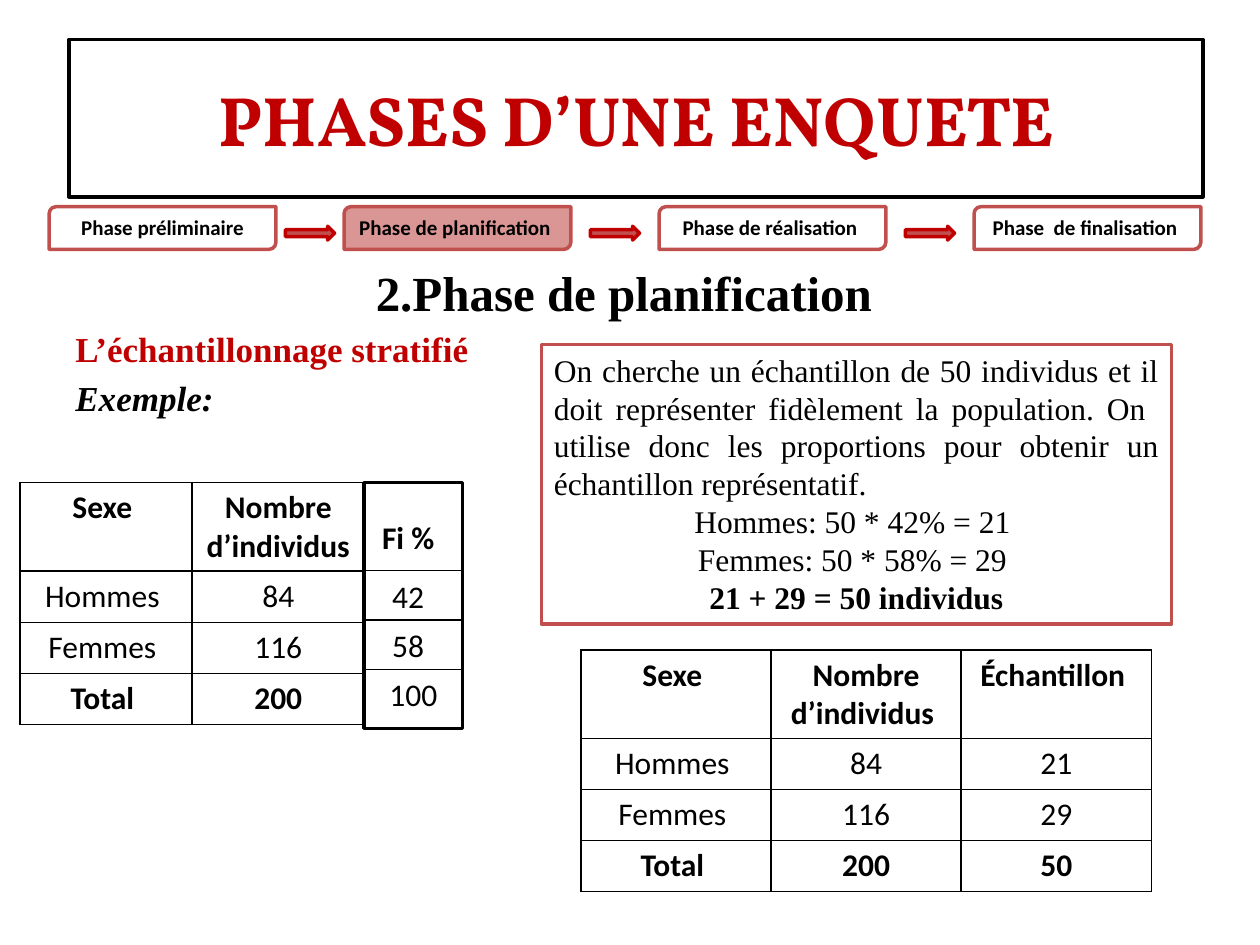
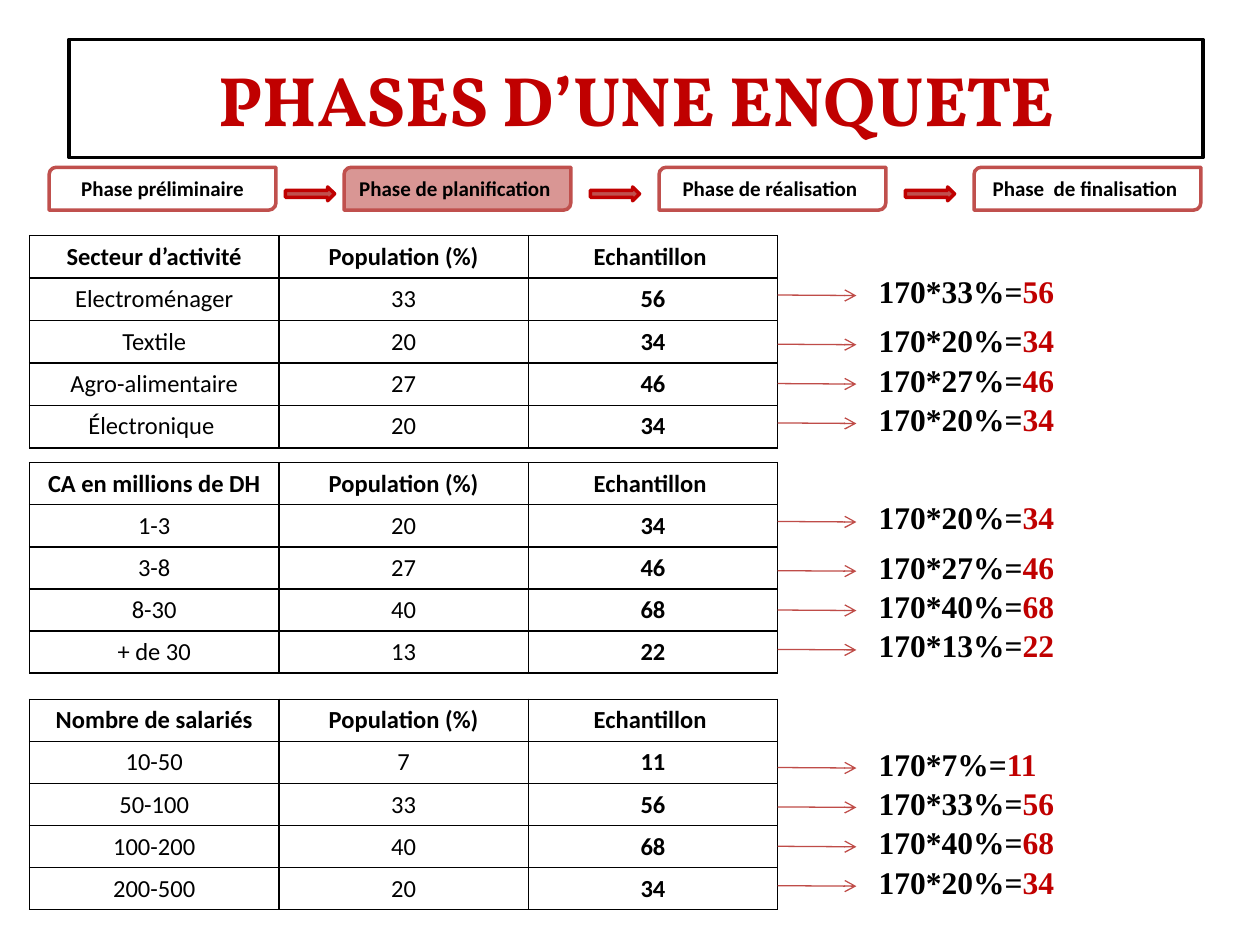
import pptx
import pptx.dml.color
import pptx.enum.shapes
import pptx.enum.text
import pptx.oxml
import pptx.oxml.ns
import pptx.util

Pt = pptx.util.Pt
SHAPES = pptx.enum.shapes.MSO_SHAPE
ANCHOR = pptx.enum.text.MSO_ANCHOR
ALIGN = pptx.enum.text.PP_ALIGN

BLACK, WHITE, RED, BRICK, ROSE = "000000", "FFFFFF", "C00000", "C0504D", "D99694"
THIN_RED = "BF4C48"
SANS, SERIF, DISPLAY = "Calibri", "Times New Roman", "Vollkorn"

TITLE = "PHASES D’UNE ENQUETE"
PHASES = [  # text, left, fill
    ("Phase préliminaire", 28.1, None),
    ("Phase de planification ", 196.6, ROSE),
    ("Phase de réalisation ", 376.6, WHITE),
    ("Phase  de finalisation ", 556.6, WHITE),
]
PHASE_WIDTH, PHASE_HEIGHT = 129.6, 24.5
ARROW_WIDTH, ARROW_HEIGHT = 28.1, 7.9

HEADINGS = [  # text, format, alignment
    ("2.Phase de planification ", {"size": 28, "bold": True}, ALIGN.CENTER),
    ("L’échantillonnage stratifié", {"size": 20, "bold": True, "color": RED}, ALIGN.LEFT),
    ("Exemple:", {"size": 20, "bold": True, "italic": True}, ALIGN.LEFT),
]
POPULATION = [
    ("Sexe ", "Nombre d’individus "),
    ("Hommes ", "84"),
    ("Femmes ", "116"),
    ("Total ", "200"),
]
SAMPLE_COLUMN = ["Échantillon ", "21", "29", "50"]
FREQUENCIES = ["42", "58", "100"]
EXPLANATION = [  # text, bold, alignment
    ("On cherche un échantillon de 50 individus et il doit représenter fidèlement "
     "la population. On  utilise donc les proportions pour obtenir un échantillon "
     "représentatif. ", False, ALIGN.JUSTIFY),
    ("Hommes: 50 * 42% = 21 ", False, ALIGN.CENTER),
    ("Femmes: 50 * 58% = 29 ", False, ALIGN.CENTER),
    ("21 + 29 = 50 individus", True, ALIGN.CENTER),
]

SAMPLE_SIZE = 170
QUOTAS = [
    {"criterion": "Secteur d’activité", "top": 134.6, "first_formula": 151.9, "extra_gap": 5.6,
     "rows": [("Electroménager", "33", "56"), ("Textile", "20", "34"),
              ("Agro-alimentaire", "27", "46"), ("Électronique ", "20", "34")]},
    {"criterion": "CA en millions de DH", "top": 264.4, "first_formula": 281.3, "extra_gap": 5.6,
     "rows": [("1-3", "20", "34"), ("3-8", "27", "46"),
              ("8-30", "40", "68"), ("+ de 30", "13", "22")]},
    {"criterion": "Nombre de salariés", "top": 399.6, "first_formula": 421.9, "extra_gap": 0,
     "rows": [("10-50", "7", "11"), ("50-100", "33", "56"),
              ("100-200", "40", "68"), ("200-500", "20", "34")]},
]
FORMULA_STEP = 22.5


def rgb(value):
    return pptx.dml.color.RGBColor.from_string(value)


def points(*lengths):
    return [Pt(length) for length in lengths]


def write(paragraph, text, color=BLACK, size=18, align=ALIGN.CENTER, **font):
    """Add one formatted run to the paragraph."""
    paragraph.alignment = align
    run = paragraph.add_run()
    run.text = text
    run.font.color.rgb = rgb(color)
    for name, value in {"name": SANS, "size": Pt(size), "bold": False, **font}.items():
        setattr(run.font, name, value)


def next_paragraph(frame, index):
    return frame.add_paragraph() if index else frame.paragraphs[0]


def add_box(slide, kind, box, fill, line, anchor=ANCHOR.TOP):
    shape = slide.shapes.add_shape(kind, *points(*box))
    shape.shadow.inherit = False
    if fill:
        shape.fill.solid()
        shape.fill.fore_color.rgb = rgb(fill)
    else:
        shape.fill.background()
    shape.line.color.rgb = rgb(line)
    shape.line.width = Pt(2)
    shape.text_frame.word_wrap = True
    shape.text_frame.vertical_anchor = anchor
    return shape


def add_text(slide, box):
    frame = slide.shapes.add_textbox(*points(*box)).text_frame
    frame.word_wrap = True
    return frame


def add_line(slide, start, end, color, arrow=False):
    connector = slide.shapes.add_connector(
        pptx.enum.shapes.MSO_CONNECTOR.STRAIGHT, *points(*start, *end))
    connector.line.color.rgb = rgb(color)
    connector.line.width = Pt(0.75)
    if arrow:
        line = connector.line._get_or_add_ln()
        line.append(pptx.oxml.parse_xml(
            f'<a:tailEnd {pptx.oxml.ns.nsdecls("a")} type="arrow"/>'))
    connector._element.spPr.append(pptx.oxml.parse_xml(
        f'<a:effectLst {pptx.oxml.ns.nsdecls("a")}/>'))


def add_borders(cell):
    properties = cell._tc.get_or_add_tcPr()
    for side in "LRTB":
        properties.append(pptx.oxml.parse_xml(
            f'<a:ln{side} {pptx.oxml.ns.nsdecls("a")} w="{Pt(1)}"><a:solidFill>'
            f'<a:srgbClr val="{BLACK}"/></a:solidFill></a:ln{side}>'))


def add_grid(slide, left, top, column_width, row_heights, rows, size, is_bold):
    """Add a black-ruled table; is_bold(row, column) picks the bold cells."""
    width = column_width * len(rows[0])
    table = slide.shapes.add_table(
        len(rows), len(rows[0]), *points(left, top, width, sum(row_heights))).table
    table.first_row = table.horz_banding = False
    for column in table.columns:
        column.width = Pt(column_width)
    for row_index, values in enumerate(rows):
        table.rows[row_index].height = Pt(row_heights[row_index])
        for column_index, value in enumerate(values):
            cell = table.cell(row_index, column_index)
            add_borders(cell)
            cell.fill.background()
            write(cell.text_frame.paragraphs[0], value, size=size,
                  bold=is_bold(row_index, column_index))


def add_header(slide, title_height):
    """Add the title band and, below it, the row of phases."""
    title_top = 22.5
    title = add_box(slide, SHAPES.RECTANGLE, (39.4, title_top, 648, title_height),
                    WHITE, BLACK, ANCHOR.MIDDLE)
    write(title.text_frame.paragraphs[0], TITLE, RED, 40, name=DISPLAY, bold=True)
    top = title_top + title_height + 5.6
    for text, left, fill in PHASES:
        phase = add_box(slide, SHAPES.ROUND_2_DIAG_RECTANGLE,
                        (left, top, PHASE_WIDTH, PHASE_HEIGHT), fill, BRICK)
        write(phase.text_frame.paragraphs[0], text, size=12, bold=True)
    for (_, left, _), (_, following, _) in zip(PHASES, PHASES[1:]):
        arrow_left = (left + PHASE_WIDTH + following - ARROW_WIDTH) / 2
        add_box(slide, SHAPES.RIGHT_ARROW,
                (arrow_left, top + 11.2, ARROW_WIDTH, ARROW_HEIGHT), BRICK, RED)


def add_frequency_column(slide):
    left, width, first_line, step = 208.1, 56.2, 326.2, 28.1
    add_box(slide, SHAPES.RECTANGLE, (left, 275.8, width, 140.4), None, BLACK)
    heading = add_text(slide, (left, 292.3, 50.4, 29))
    write(heading.paragraphs[0], "Fi %", bold=True)
    for index, value in enumerate(FREQUENCIES):
        top = first_line + index * step
        add_line(slide, (left, top), (left + width, top), BLACK)
        label_width = width if value == FREQUENCIES[-1] else 50.4
        write(add_text(slide, (left, top, label_width, 29)).paragraphs[0], value)


def build_stratified_slide(slide):
    headings = add_text(slide, (36, 146.2, 648, 95.8))
    for index, (text, font, align) in enumerate(HEADINGS):
        paragraph = next_paragraph(headings, index)
        paragraph.space_before = Pt(font["size"] * 0.2)
        write(paragraph, text, align=align, name=SERIF, **font)
    add_header(slide, 90)

    row_heights = [50.6] + [29.2] * 3
    sample = [(*row, value) for row, value in zip(POPULATION, SAMPLE_COLUMN)]
    for left, top, column_width, rows in [(11.3, 275.8, 98.5, POPULATION),
                                          (331.9, 371.3, 108.7, sample)]:
        add_grid(slide, left, top, column_width, row_heights, rows, 18,
                 lambda row, column: row in (0, 3))
    add_frequency_column(slide)

    explanation = add_box(slide, SHAPES.RECTANGLE, (309.4, 196.9, 360, 159.8), WHITE, BRICK)
    for index, (text, bold, align) in enumerate(EXPLANATION):
        write(next_paragraph(explanation.text_frame, index), text,
              align=align, name=SERIF, bold=bold)


def build_quota_slide(slide):
    add_header(slide, 67.5)
    left, column_width = 16.9, 142.5
    table_right = left + 3 * column_width
    for quota in QUOTAS:
        rows = [(quota["criterion"], "Population (%)", "Echantillon "), *quota["rows"]]
        add_grid(slide, left, quota["top"], column_width, [24.05] * len(rows), rows, 14,
                 lambda row, column: row == 0 or column == 2)
        for index, (_, share, count) in enumerate(quota["rows"]):
            top = quota["first_formula"] + index * FORMULA_STEP
            if index:
                top += quota["extra_gap"]
            add_line(slide, (table_right, top + 16.7), (table_right + 45, top + 17),
                     THIN_RED, arrow=True)
            paragraph = add_text(slide, (495, top, 123.8, 29)).paragraphs[0]
            for text, color in [(f"{SAMPLE_SIZE}*{share}%=", BLACK), (count, RED)]:
                write(paragraph, text, color, align=ALIGN.LEFT, name=SERIF, bold=True)


def main():
    presentation = pptx.Presentation()
    presentation.slide_width, presentation.slide_height = points(720, 540)
    for build in (build_stratified_slide, build_quota_slide):
        build(presentation.slides.add_slide(presentation.slide_layouts[6]))
    presentation.save("out.pptx")


if __name__ == "__main__":
    main()
